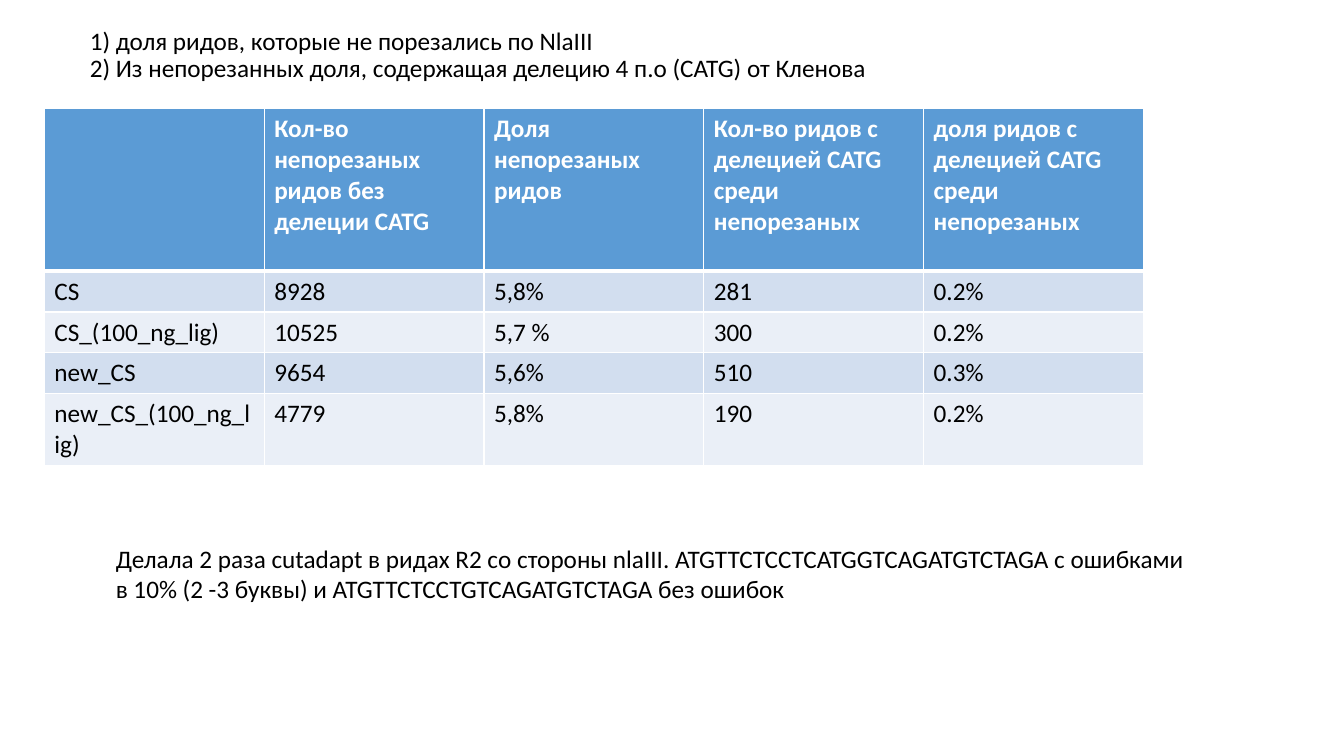
from lxml.etree import SubElement
from pptx import Presentation
from pptx.dml.color import RGBColor
from pptx.enum.text import MSO_ANCHOR, MSO_AUTO_SIZE, PP_ALIGN
from pptx.oxml.ns import qn
from pptx.util import Inches, Pt

COLORS = {"text": "000000", "white": "FFFFFF", "head": "5B9BD5",
          "odd": "D2DEEF", "even": "EAEFF7"}

TITLE = ["1) доля ридов, которые не порезались по NlaIII",
         "2) Из непорезанных доля, содержащая делецию 4 п.о (СATG) от Кленова"]
NOTE = ("Делала 2 раза cutadapt в ридах R2 со стороны nlaIII. "
        "ATGTTCTCCTCATGGTCAGATGTCTAGA с ошибками в 10% (2 -3 буквы) "
        "и ATGTTCTCCTGTCAGATGTCTAGA без ошибок")
ROWS = [
    ["", "Кол-во непорезаных ридов без делеции CATG", "Доля непорезаных ридов",
     "Кол-во ридов с делецией CATG среди непорезаных",
     "доля ридов с делецией CATG среди непорезаных"],
    ["CS", "8928", "5,8%", "281", "0.2%"],
    ["CS_(100_ng_lig)", "10525", "5,7 %", "300", "0.2%"],
    ["new_CS", "9654", "5,6%", "510", "0.3%"],
    ["new_CS_(100_ng_lig)", "4779", "5,8%", "190", "0.2%"],
]
HEIGHTS = [1.61, 0.4, 0.4, 0.4, 0.71]
WIDTH = 2.18


def write(frame, lines, color="text", bold=False, spacing=None):
    """Write lines into one left-aligned paragraph."""
    para = frame.paragraphs[0]
    para.alignment = PP_ALIGN.LEFT
    if spacing:
        para.line_spacing = spacing
    for i, line in enumerate(lines):
        if i:
            para.add_line_break()
        run = para.add_run()
        run.text = line
        run.font.name = "Calibri"
        run.font.size = Pt(18)
        run.font.bold = bold
        run.font.color.rgb = RGBColor.from_string(COLORS[color])


def border(cell, base):
    """Draw white cell borders with a chosen bottom width."""
    props = cell._tc.get_or_add_tcPr()
    for i, side in enumerate(("lnL", "lnR", "lnT", "lnB")):
        width = Pt(base if side == "lnB" else 1)
        line = props.makeelement(qn(f"a:{side}"), {"w": str(width)})
        fill = SubElement(line, qn("a:solidFill"))
        SubElement(fill, qn("a:srgbClr"), val=COLORS["white"])
        props.insert(i, line)


def add_title(slide):
    """Place and fill the title."""
    title = slide.shapes.title
    title.left, title.top = Inches(0.79), Inches(0.1)
    title.width, title.height = Inches(11.5), Inches(1.45)
    frame = title.text_frame
    frame.auto_size = MSO_AUTO_SIZE.NONE
    frame.vertical_anchor = MSO_ANCHOR.TOP
    frame.margin_top = Inches(0.18)
    write(frame, TITLE, spacing=0.9)


def add_grid(slide):
    """Add the table of read counts."""
    count = len(ROWS[0])
    table = slide.shapes.add_table(
        len(ROWS), count, Inches(0.44), Inches(1.08),
        Inches(WIDTH * count), Inches(sum(HEIGHTS))).table
    for col in table.columns:
        col.width = Inches(WIDTH)
    for r, (row, height) in enumerate(zip(ROWS, HEIGHTS)):
        table.rows[r].height = Inches(height)
        head = r == 0
        tone = "head" if head else "odd" if r % 2 else "even"
        for c, text in enumerate(row):
            cell = table.cell(r, c)
            cell.fill.solid()
            cell.fill.fore_color.rgb = RGBColor.from_string(COLORS[tone])
            border(cell, 3 if head else 1)
            if text:
                write(cell.text_frame, [text], bold=head,
                      color="white" if head else "text")


def add_note(slide):
    """Add the method note below the table."""
    box = slide.shapes.add_textbox(
        Inches(1.05), Inches(5.34), Inches(10.93), Inches(0.71))
    box.text_frame.word_wrap = True
    box.text_frame.auto_size = MSO_AUTO_SIZE.SHAPE_TO_FIT_TEXT
    write(box.text_frame, [NOTE])


def main():
    """Build and save the slide."""
    deck = Presentation()
    deck.slide_width, deck.slide_height = Inches(13.33), Inches(7.5)
    slide = deck.slides.add_slide(deck.slide_layouts[5])
    add_title(slide)
    add_grid(slide)
    add_note(slide)
    deck.save("out.pptx")


if __name__ == "__main__":
    main()
